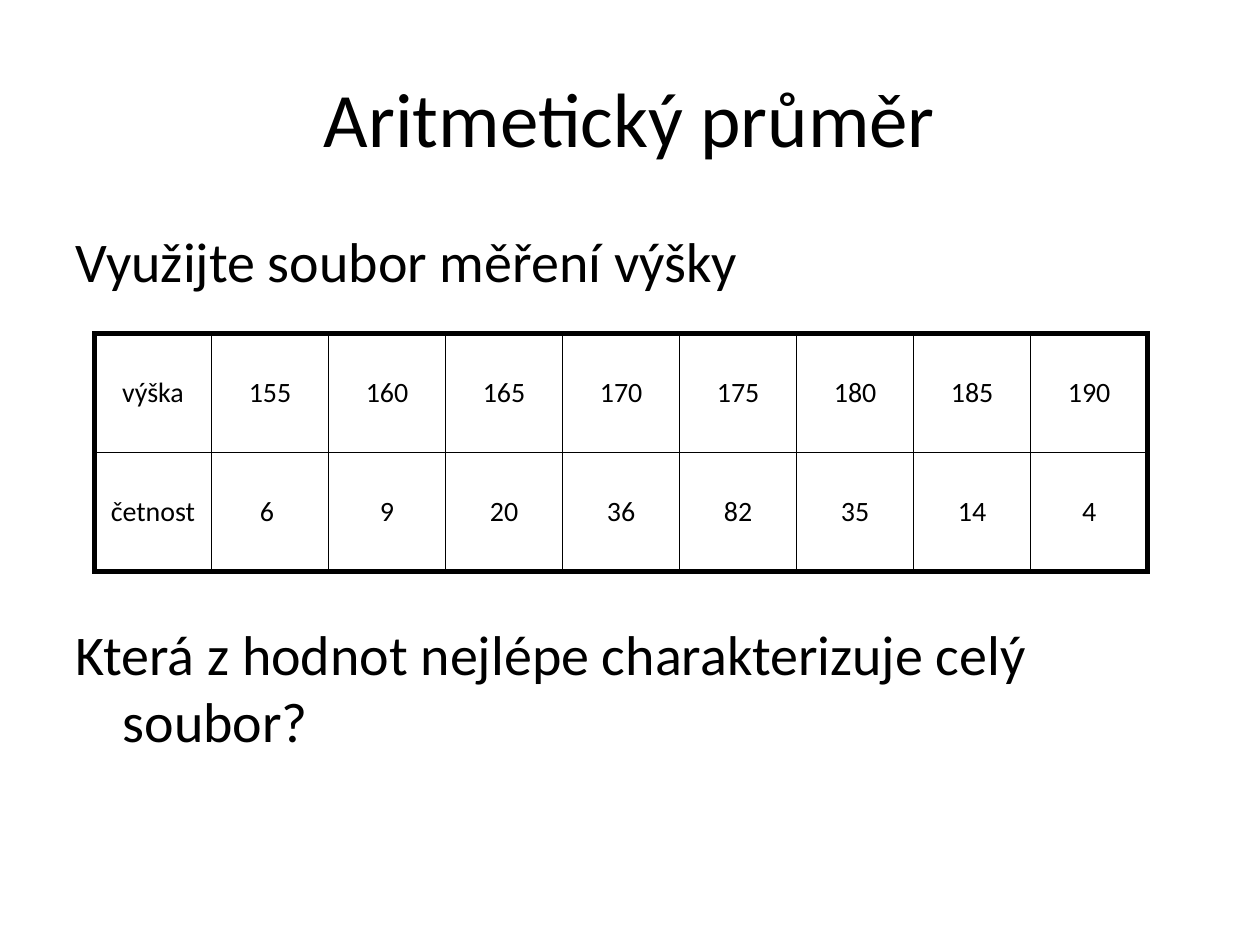
"""Build a slide on the arithmetic mean with a height frequency table."""
from dataclasses import dataclass

from lxml.etree import SubElement as Sub
from pptx import Presentation
from pptx.dml.color import RGBColor as Rgb
from pptx.enum.text import MSO_ANCHOR as Anchor, PP_ALIGN as Align
from pptx.oxml.ns import qn
from pptx.util import Inches, Pt


@dataclass(frozen=True)
class Theme:
    font: str = "Calibri"
    ink: str = "000000"
    title: int = 44
    body: int = 32
    cell: int = 16
    thin: int = 1
    thick: int = 3


THEME = Theme()
WIDE, HIGH = 10, 7.5
TITLE = "Aritmetický průměr"
BODY = [
    ("Využijte soubor měření výšky", 6.4),
    ("Která z hodnot nejlépe charakterizuje celý soubor?", 186),
]
ROWS = [
    ("výška", "155", "160", "165", "170", "175", "180", "185", "190"),
    ("četnost", "6 ", "9", "20", "36", "82", "35", "14", "4"),
]
AREAS = {
    "title": (0.05, 0.04, 0.9, 1 / 6),
    "body": (0.05, 0.233, 0.9, 0.66),
    "table": (0.075, 0.353, 0.836, 0.252),
}
HANG = 0.375


def area(name):
    x, y, w, h = AREAS[name]
    return [Inches(v) for v in (x * WIDE, y * HIGH, w * WIDE, h * HIGH)]


def write(para, text, size, align):
    para.alignment = align
    run = para.add_run()
    run.text = text
    run.font.name = THEME.font
    run.font.size = Pt(size)
    run.font.color.rgb = Rgb.from_string(THEME.ink)


def edge(cell, side, width):
    line = Sub(cell._tc.get_or_add_tcPr(), qn(f"a:ln{side}"), w=str(Pt(width)))
    fill = Sub(line, qn("a:solidFill"))
    Sub(fill, qn("a:srgbClr"), val=THEME.ink)


def add_title(slide):
    title = slide.shapes.title
    title.left, title.top, title.width, title.height = area("title")
    title.text_frame.vertical_anchor = Anchor.MIDDLE
    write(title.text_frame.paragraphs[0], TITLE, THEME.title, Align.CENTER)


def add_body(slide):
    frame = slide.shapes.add_textbox(*area("body")).text_frame
    frame.word_wrap = True
    for i, (text, gap) in enumerate(BODY):
        para = frame.add_paragraph() if i else frame.paragraphs[0]
        write(para, text, THEME.body, Align.LEFT)
        para.space_before = Pt(gap)
        props = para._p.get_or_add_pPr()
        props.set("marL", str(Inches(HANG)))
        props.set("indent", str(-Inches(HANG)))


def add_grid(slide):
    rows, cols = len(ROWS), len(ROWS[0])
    table = slide.shapes.add_table(rows, cols, *area("table")).table
    table.first_row = table.horz_banding = False
    for r, row in enumerate(ROWS):
        for c, text in enumerate(row):
            cell = table.cell(r, c)
            cell.vertical_anchor = Anchor.MIDDLE
            cell.margin_left = cell.margin_right = 0
            cell.margin_top = cell.margin_bottom = 0
            write(cell.text_frame.paragraphs[0], text, THEME.cell, Align.CENTER)
            outer = {"L": c == 0, "R": c == cols - 1,
                     "T": r == 0, "B": r == rows - 1}
            for side, rim in outer.items():
                edge(cell, side, THEME.thick if rim else THEME.thin)
            cell.fill.background()


def main():
    deck = Presentation()
    deck.slide_width, deck.slide_height = Inches(WIDE), Inches(HIGH)
    slide = deck.slides.add_slide(deck.slide_layouts[5])
    add_title(slide)
    add_body(slide)
    add_grid(slide)
    deck.save("out.pptx")


if __name__ == "__main__":
    main()
